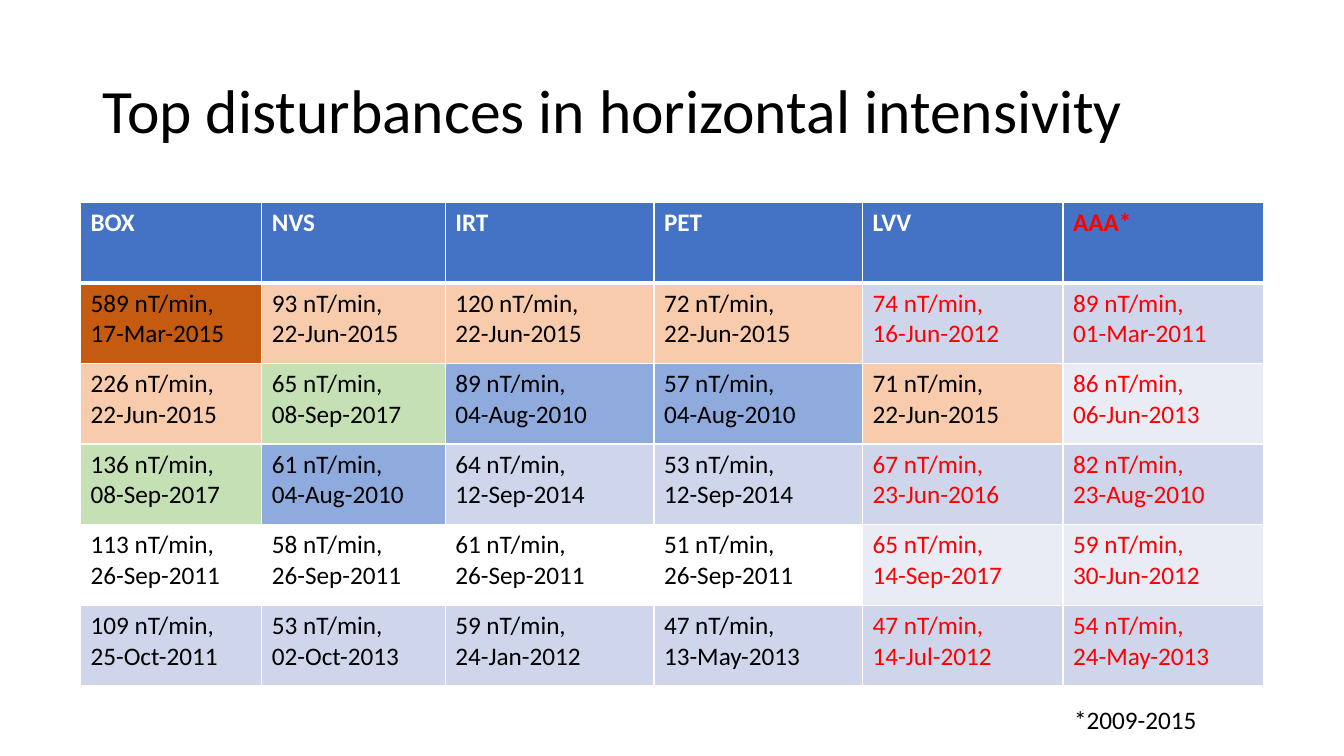
from lxml.etree import SubElement
from pptx import Presentation
from pptx.dml.color import RGBColor
from pptx.enum.text import MSO_ANCHOR as Anchor, MSO_AUTO_SIZE as AutoSize, PP_ALIGN as Align
from pptx.oxml.ns import qn
from pptx.util import Cm, Pt

COLORS = {
    "black": "000000", "white": "FFFFFF", "red": "FF0000", "header": "4472C4",
    "band_dark": "CFD5EA", "band_light": "E9EBF5",
    "rust": "C55A11", "peach": "F8CBAD", "green": "C5E0B4", "blue": "8FAADC",
}
# Storms seen at several stations, each with its own fill
STORM_FILLS = {
    "17-Mar-2015": "rust", "22-Jun-2015": "peach", "08-Sep-2017": "green",
    "04-Aug-2010": "blue", "26-Sep-2011": "white",
}
STATIONS = ["BOX", "NVS", "IRT", "PET", "LVV", "AAA*"]
COLUMN_WIDTHS = [4.57, 4.62, 5.26, 5.26, 5.05, 5.05]
ROW_HEIGHT = 2.03
FIRST_RED_COLUMN = STATIONS.index("LVV")
DISTURBANCES = [
    [(589, "17-Mar-2015"), (93, "22-Jun-2015"), (120, "22-Jun-2015"),
     (72, "22-Jun-2015"), (74, "16-Jun-2012"), (89, "01-Mar-2011")],
    [(226, "22-Jun-2015"), (65, "08-Sep-2017"), (89, "04-Aug-2010"),
     (57, "04-Aug-2010"), (71, "22-Jun-2015"), (86, "06-Jun-2013")],
    [(136, "08-Sep-2017"), (61, "04-Aug-2010"), (64, "12-Sep-2014"),
     (53, "12-Sep-2014"), (67, "23-Jun-2016"), (82, "23-Aug-2010")],
    [(113, "26-Sep-2011"), (58, "26-Sep-2011"), (61, "26-Sep-2011"),
     (51, "26-Sep-2011"), (65, "14-Sep-2017"), (59, "30-Jun-2012")],
    [(109, "25-Oct-2011"), (53, "02-Oct-2013"), (59, "24-Jan-2012"),
     (47, "13-May-2013"), (47, "14-Jul-2012"), (54, "24-May-2013")],
]


def color(name):
    return RGBColor.from_string(COLORS[name])


def write_text(frame, *lines, font="Calibri", size=18, ink="black", bold=False, spacing=1.0):
    """Put each line in its own left-aligned paragraph."""
    for index, line in enumerate(lines):
        para = frame.add_paragraph() if index else frame.paragraphs[0]
        para.alignment = Align.LEFT
        para.line_spacing = spacing
        span = para.add_run()
        span.text = line
        span.font.name = font
        span.font.size = Pt(size)
        span.font.bold = bold
        span.font.color.rgb = color(ink)


def set_borders(cell, top=1, bottom=1):
    """Draw white borders; call before the fill, which follows them in the XML."""
    properties = cell._tc.get_or_add_tcPr()
    for side, points in (("L", 1), ("R", 1), ("T", top), ("B", bottom)):
        line = SubElement(properties, qn(f"a:ln{side}"), w=str(Pt(points)))
        fill = SubElement(line, qn("a:solidFill"))
        SubElement(fill, qn("a:srgbClr"), val=COLORS["white"])


class SlideBuilder:
    def __init__(self, deck):
        self.slide = deck.slides.add_slide(deck.slide_layouts.get_by_name("Title Only"))

    def title(self, text, left, top, width, height):
        box = self.slide.shapes.title
        box.left, box.top, box.width, box.height = map(Cm, (left, top, width, height))
        box.text_frame.vertical_anchor = Anchor.MIDDLE
        box.text_frame.auto_size = AutoSize.NONE
        write_text(box.text_frame, text, size=44, spacing=0.9)

    def table(self, left, top):
        row_count = len(DISTURBANCES) + 1
        table = self.slide.shapes.add_table(
            row_count, len(STATIONS), Cm(left), Cm(top),
            Cm(sum(COLUMN_WIDTHS)), Cm(ROW_HEIGHT * row_count)).table
        for column, width in zip(table.columns, COLUMN_WIDTHS):
            column.width = Cm(width)
        for index, station in enumerate(STATIONS):
            ink = "red" if station.endswith("*") else "white"
            self.cell(table.cell(0, index), station, fill="header", bottom=3, ink=ink, bold=True)
        for row, entries in enumerate(DISTURBANCES, start=1):
            band = "band_dark" if row % 2 else "band_light"
            for column, (rate, date) in enumerate(entries):
                local = column >= FIRST_RED_COLUMN and date not in STORM_FILLS
                self.cell(table.cell(row, column), f"{rate} nT/min,", date,
                          fill=STORM_FILLS.get(date, band), top=3 if row == 1 else 1,
                          ink="red" if local else "black")

    def cell(self, cell, *lines, fill, top=1, bottom=1, **text_format):
        set_borders(cell, top, bottom)
        cell.fill.solid()
        cell.fill.fore_color.rgb = color(fill)
        write_text(cell.text_frame, *lines, **text_format)

    def note(self, text, left, top, width, height):
        box = self.slide.shapes.add_textbox(*map(Cm, (left, top, width, height)))
        box.text_frame.word_wrap = False
        box.text_frame.auto_size = AutoSize.SHAPE_TO_FIT_TEXT
        write_text(box.text_frame, text)


def main():
    deck = Presentation()
    deck.slide_width, deck.slide_height = Cm(33.87), Cm(19.05)
    builder = SlideBuilder(deck)
    builder.title("Top disturbances in horizontal intensivity", 2.33, 1.01, 29.21, 3.68)
    builder.table(2.03, 5.1)
    builder.note("*2009-2015", 26.82, 17.63, 3.63, 1.03)
    deck.save("out.pptx")


if __name__ == "__main__":
    main()
